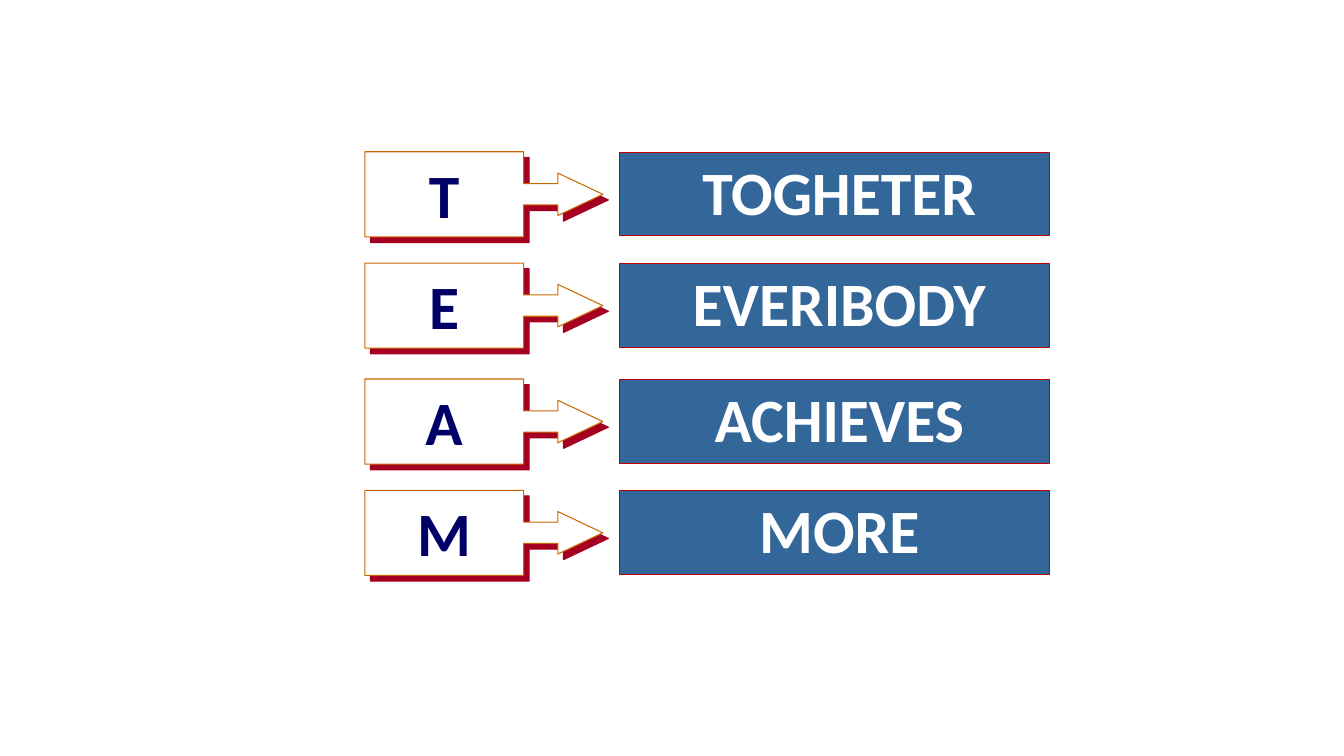
from lxml import etree
from pptx import Presentation
from pptx.dml.color import RGBColor
from pptx.enum.shapes import MSO_SHAPE
from pptx.enum.text import MSO_ANCHOR, MSO_AUTO_SIZE, PP_ALIGN
from pptx.oxml.ns import qn
from pptx.util import Pt

RECT = MSO_SHAPE.RECTANGLE
CALL = MSO_SHAPE.RIGHT_ARROW_CALLOUT
TOP, MIDDLE = MSO_ANCHOR.TOP, MSO_ANCHOR.MIDDLE
CENTER = PP_ALIGN.CENTER
GROW = MSO_AUTO_SIZE.SHAPE_TO_FIT_TEXT

COLORS = {
    "white": "FFFFFF",
    "navy": "000066",
    "blue": "336699",
    "orange": "CC6600",
    "red": "C00000",
    "shade": "A50021",
}
ROWS = [
    ("T", "TOGHETER", 108.4),
    ("E", "EVERIBODY", 187.9),
    ("A", "ACHIEVES", 270.7),
    ("M", "MORE", 350.2),
]


def color(name):
    """Return the named colour."""
    return RGBColor.from_string(COLORS[name])


def add_box(slide, kind, place, text, fill, line, ink, anchor):
    """Add a filled and outlined shape with one bold centred word."""
    box = slide.shapes.add_shape(kind, *map(Pt, place))
    box.shadow.inherit = False
    box.fill.solid()
    box.fill.fore_color.rgb = color(fill)
    box.line.color.rgb = color(line)
    box.line.width = Pt(0.75)
    frame = box.text_frame
    frame.word_wrap = True
    frame.auto_size = GROW
    frame.vertical_anchor = anchor
    para = frame.paragraphs[0]
    para.text = text
    para.alignment = CENTER
    font = para.font
    font.name = "Calibri"
    font.size = Pt(44)
    font.bold = True
    font.color.rgb = color(ink)
    return box


def add_shade(box):
    """Give a shape a hard shadow down to the right."""
    effects = box._element.spPr.find(qn("a:effectLst"))
    shade = etree.SubElement(
        effects, qn("a:outerShdw"), blurRad="0", dist=str(Pt(5.7)),
        dir="2700000", algn="ctr", rotWithShape="0")
    etree.SubElement(shade, qn("a:srgbClr"), val=COLORS["shade"])


def add_letter(slide, text, top):
    """Add an arrow callout with the initial letter."""
    box = add_box(slide, CALL, (260.6, top, 170, 60.8), text,
                  "white", "orange", "navy", TOP)
    for index, value in enumerate((0.25, 0.25, 0.529, 0.667)):
        box.adjustments[index] = value
    add_shade(box)


def add_word(slide, text, top):
    """Add a bar with the word that the letter stands for."""
    box = add_box(slide, RECT, (442.3, top + 0.5, 307.4, 59.6), text,
                  "blue", "red", "white", MIDDLE)
    para = box.text_frame.paragraphs[0]
    para.line_spacing = 0.95
    props = para._p.get_or_add_pPr()
    props.set("marL", str(Pt(7.2)))
    props.set("indent", "0")


def main():
    """Build the slide and save it."""
    deck = Presentation()
    deck.slide_width, deck.slide_height = Pt(960), Pt(540)
    slide = deck.slides.add_slide(deck.slide_layouts[6])
    for letter, word, top in ROWS:
        add_letter(slide, letter, top)
        add_word(slide, word, top)
    deck.save("out.pptx")


if __name__ == "__main__":
    main()
